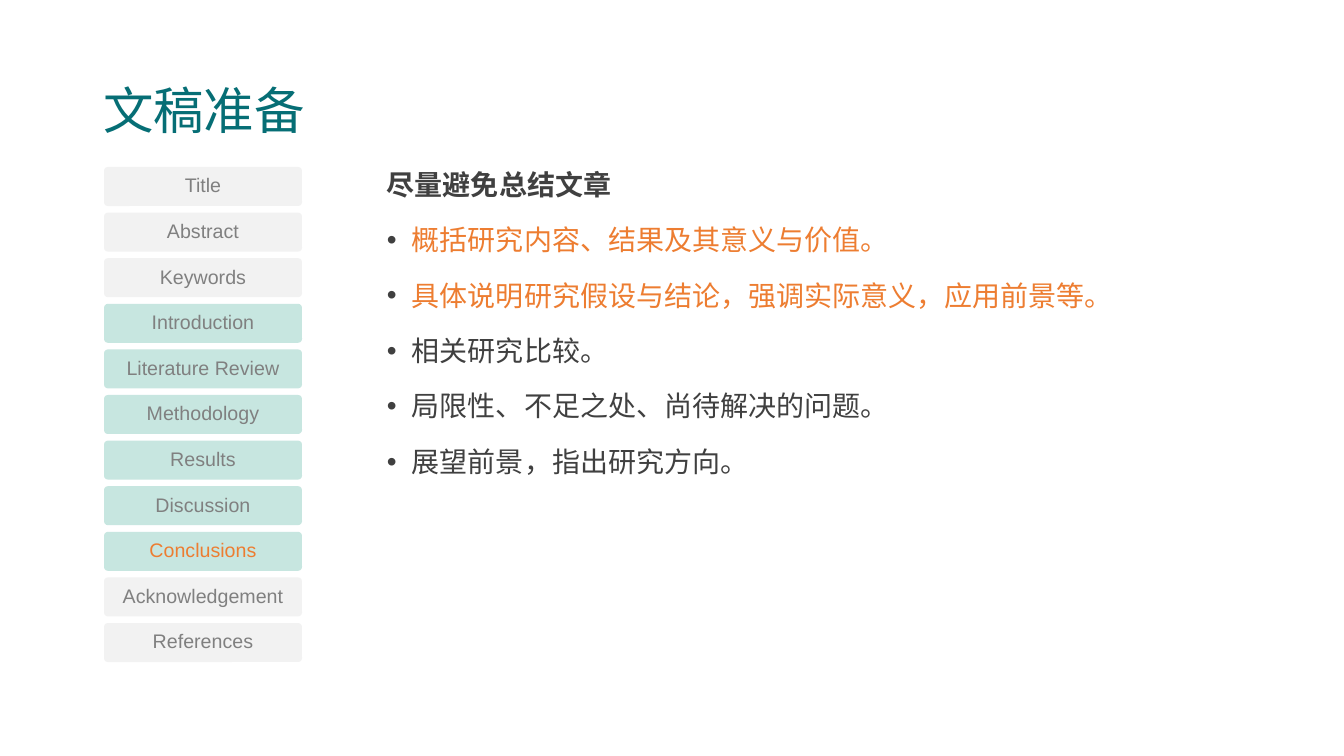
from lxml.etree import SubElement
from pptx import Presentation
from pptx.dml.color import RGBColor
from pptx.enum.shapes import MSO_SHAPE
from pptx.enum.text import MSO_ANCHOR, PP_ALIGN
from pptx.oxml.ns import qn
from pptx.util import Emu, Pt

PX = 914400 / 100.8
TEAL = RGBColor(0x06, 0x6E, 0x75)
MINT = RGBColor(0xC7, 0xE6, 0xE0)
PALE = RGBColor(0xF2, 0xF2, 0xF2)
GRAY = RGBColor(0x80, 0x80, 0x80)
DARK = RGBColor(0x40, 0x40, 0x40)
ORANGE = RGBColor(0xED, 0x7D, 0x31)
LATIN, CHINESE = "Arial", "Noto Sans CJK SC"

SECTIONS = ["Title", "Abstract", "Keywords", "Introduction", "Literature Review",
            "Methodology", "Results", "Discussion", "Conclusions",
            "Acknowledgement", "References"]
MAIN_SECTIONS = SECTIONS[3:9]
CURRENT_SECTION = "Conclusions"

HEADING = "尽量避免总结文章"
POINTS = [
    ("概括研究内容、结果及其意义与价值。", ORANGE),
    ("具体说明研究假设与结论，强调实际意义，应用前景等。", ORANGE),
    ("相关研究比较。", DARK),
    ("局限性、不足之处、尚待解决的问题。", DARK),
    ("展望前景，指出研究方向。", DARK),
]


def px(length):
    return Emu(round(length * PX))


def format_text(paragraph, size, color, font=LATIN, bold=False):
    paragraph.line_spacing = 0.9
    for run in paragraph.runs:
        run.font.size = Pt(size)
        run.font.bold = bold
        run.font.name = font
        run.font.color.rgb = color
        SubElement(run.font._element, qn("a:ea"), typeface=CHINESE)


def add_bullet(paragraph, color, indent):
    properties = paragraph._p.get_or_add_pPr()
    properties.set("marL", str(px(indent)))
    properties.set("indent", str(-px(indent)))
    bullet_color = SubElement(properties, qn("a:buClr"))
    SubElement(bullet_color, qn("a:srgbClr"), val=str(color))
    SubElement(properties, qn("a:buFont"), typeface=LATIN)
    SubElement(properties, qn("a:buChar"), char="•")


def place_title(slide, text, left, top, width, height):
    title = slide.shapes.title
    title.left, title.top, title.width, title.height = map(px, (left, top, width, height))
    frame = title.text_frame
    frame.text = text
    frame.vertical_anchor = MSO_ANCHOR.MIDDLE
    frame.paragraphs[0].alignment = PP_ALIGN.LEFT
    format_text(frame.paragraphs[0], 36, TEAL)


def add_section_list(slide, left, top, width, height, label_height=39):
    """Spread the section labels evenly from the top to the bottom of the box."""
    pitch = (height - label_height) / (len(SECTIONS) - 1)
    for index, section in enumerate(SECTIONS):
        label = slide.shapes.add_shape(
            MSO_SHAPE.ROUNDED_RECTANGLE, px(left), px(top + index * pitch),
            px(width), px(label_height))
        label.adjustments[0] = 0.1
        label.shadow.inherit = False
        label.fill.solid()
        label.fill.fore_color.rgb = MINT if section in MAIN_SECTIONS else PALE
        label.line.fill.background()
        frame = label.text_frame
        frame.margin_left = frame.margin_right = px(2)
        frame.margin_top = frame.margin_bottom = px(2)
        frame.vertical_anchor = MSO_ANCHOR.MIDDLE
        frame.text = section
        frame.paragraphs[0].alignment = PP_ALIGN.CENTER
        format_text(frame.paragraphs[0], 14,
                    ORANGE if section == CURRENT_SECTION else GRAY)


def add_advice(slide, left, top, width, height):
    frame = slide.shapes.add_textbox(*map(px, (left, top, width, height))).text_frame
    frame.word_wrap = True
    frame.text = "\n".join([HEADING] + [text for text, _ in POINTS])
    heading, *points = frame.paragraphs
    format_text(heading, 20, DARK, CHINESE, bold=True)
    for paragraph, (_, color) in zip(points, POINTS):
        add_bullet(paragraph, DARK, 25)
        format_text(paragraph, 20, color, CHINESE)
    for paragraph in frame.paragraphs:
        paragraph.space_after = Pt(18)


def main():
    presentation = Presentation()
    presentation.slide_width, presentation.slide_height = px(1344), px(756)
    slide = presentation.slides.add_slide(presentation.slide_layouts[5])
    place_title(slide, "文稿准备", 93, 40, 1159, 146)
    add_advice(slide, 377, 166, 826, 388)
    add_section_list(slide, 104, 167, 198, 495)
    presentation.save("out.pptx")


if __name__ == "__main__":
    main()
